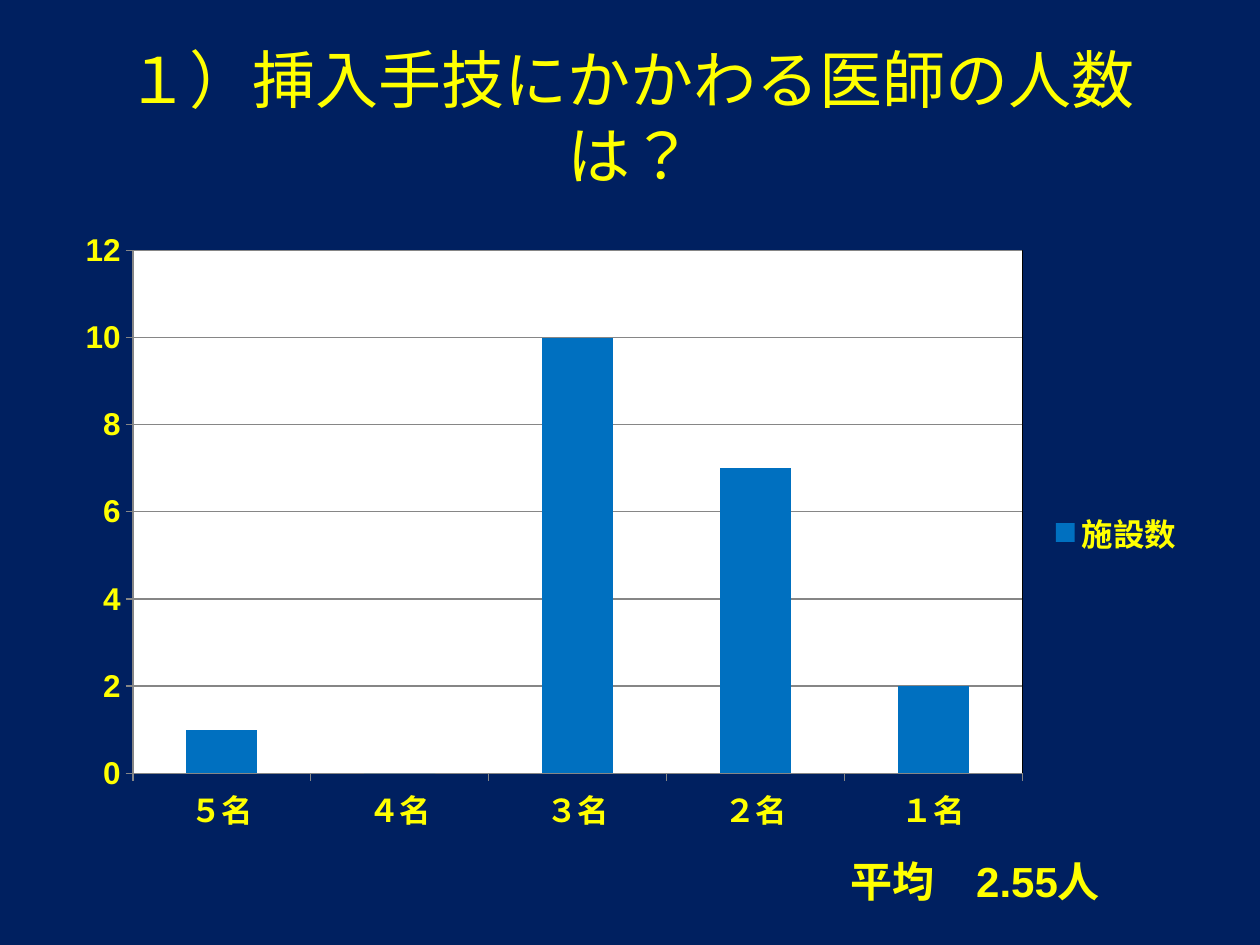
from lxml.etree import fromstring
from pptx import Presentation
from pptx.chart.data import CategoryChartData
from pptx.dml.color import RGBColor
from pptx.enum.chart import XL_CHART_TYPE as ChartType
from pptx.enum.chart import XL_LEGEND_POSITION as LegendPos
from pptx.enum.chart import XL_TICK_MARK as TickMark
from pptx.enum.lang import MSO_LANGUAGE_ID as Language
from pptx.enum.text import MSO_ANCHOR as Anchor
from pptx.enum.text import MSO_AUTO_SIZE as AutoSize
from pptx.enum.text import PP_ALIGN as Align
from pptx.oxml.ns import nsdecls, qn
from pptx.util import Cm, Pt

NAVY, YELLOW, BLUE = "002060", "FFFF00", "0070C0"
WHITE, GREY, BLACK = "FFFFFF", "868686", "000000"
FONT = "Arial"
TITLE_ONLY = 5
CHART_WIDTH, CHART_HEIGHT = 22.86, 12.57


def paint(color_format, hex_color):
    color_format.rgb = RGBColor.from_string(hex_color)


def fill_solid(fill, hex_color):
    fill.solid()
    paint(fill.fore_color, hex_color)


def style_font(font, size, bold=False):
    font.name = FONT
    font.size = Pt(size)
    font.bold = bold
    paint(font.color, YELLOW)


def add_run(paragraph, wording, size, bold=False):
    run = paragraph.add_run()
    run.text = wording
    style_font(run.font, size, bold)
    run.font.language_id = Language.JAPANESE


def place(shape, left, top, width, height):
    shape.left, shape.top = Cm(left), Cm(top)
    shape.width, shape.height = Cm(width), Cm(height)


def add_title(slide, wording):
    title = slide.shapes.title
    place(title, 1.27, 0.76, 22.86, 3.18)
    frame = title.text_frame
    frame.word_wrap = True
    frame.auto_size = AutoSize.NONE
    frame.vertical_anchor = Anchor.MIDDLE
    # Margins wide enough to keep the last two characters on a second line
    frame.margin_left = frame.margin_right = Cm(0.5)
    heading = frame.paragraphs[0]
    heading.alignment = Align.CENTER
    add_run(heading, wording, 36)
    heading._p.get_or_add_pPr().set("hangingPunct", "0")


def format_plot_area(chart, left, top, width, height):
    """Set the inner plot position in cm, fill it white and outline it."""
    area = chart.element.find(".//" + qn("c:plotArea"))
    for layout in area.findall(qn("c:layout")):
        area.remove(layout)
    sides = "".join(f'<c:{tag} val="{value}"/>' for tag, value in
                    (("xMode", "edge"), ("yMode", "edge"),
                     ("x", left / CHART_WIDTH), ("y", top / CHART_HEIGHT),
                     ("w", width / CHART_WIDTH), ("h", height / CHART_HEIGHT)))
    area.insert(0, fromstring(
        f'<c:layout {nsdecls("c")}><c:manualLayout>'
        f'<c:layoutTarget val="inner"/>{sides}</c:manualLayout></c:layout>'))
    solid = '<a:solidFill><a:srgbClr val="{}"/></a:solidFill>'.format
    area.append(fromstring(
        f'<c:spPr {nsdecls("c", "a")}>{solid(WHITE)}'
        f'<a:ln w="9525">{solid(BLACK)}</a:ln></c:spPr>'))


def add_column_chart(slide, series_name, counts):
    facilities = CategoryChartData()
    facilities.categories = list(counts)
    facilities.add_series(series_name, counts.values())
    chart = slide.shapes.add_chart(
        ChartType.COLUMN_CLUSTERED, Cm(1.27), Cm(4.45),
        Cm(CHART_WIDTH), Cm(CHART_HEIGHT), facilities).chart
    style_font(chart.font, 18, bold=True)
    chart.has_title = False

    # Columns
    plot = chart.plots[0]
    plot.gap_width = 150
    plot.vary_by_categories = False
    fill_solid(plot.series[0].format.fill, BLUE)

    # Axes and gridlines
    for axis in (chart.category_axis, chart.value_axis):
        axis.major_tick_mark = TickMark.OUTSIDE
        axis.minor_tick_mark = TickMark.NONE
        paint(axis.format.line.color, GREY)
    scale = chart.value_axis
    scale.minimum_scale, scale.maximum_scale, scale.major_unit = 0, 12, 2
    scale.has_major_gridlines = True
    paint(scale.major_gridlines.format.line.color, GREY)

    # Legend
    chart.has_legend = True
    chart.legend.position = LegendPos.RIGHT
    chart.legend.include_in_layout = False
    format_plot_area(chart, 1.41, 0.6, 17.93, 10.54)


def add_average(slide, wording):
    average = slide.shapes.add_textbox(Cm(16.89), Cm(17.12), Cm(7.19), Cm(1.27))
    frame = average.text_frame
    frame.word_wrap = True
    frame.auto_size = AutoSize.SHAPE_TO_FIT_TEXT
    add_run(frame.paragraphs[0], wording, 24, bold=True)


def main():
    deck = Presentation()
    deck.slide_width, deck.slide_height = Cm(25.4), Cm(19.05)
    slide = deck.slides.add_slide(deck.slide_layouts[TITLE_ONLY])
    fill_solid(slide.background.fill, NAVY)

    add_title(slide, "１）挿入手技にかかわる医師の人数は？")
    add_column_chart(slide, "施設数",
                     {"５名": 1, "４名": 0, "３名": 10, "２名": 7, "１名": 2})
    add_average(slide, "平均　2.55人")
    deck.save("out.pptx")


if __name__ == "__main__":
    main()
